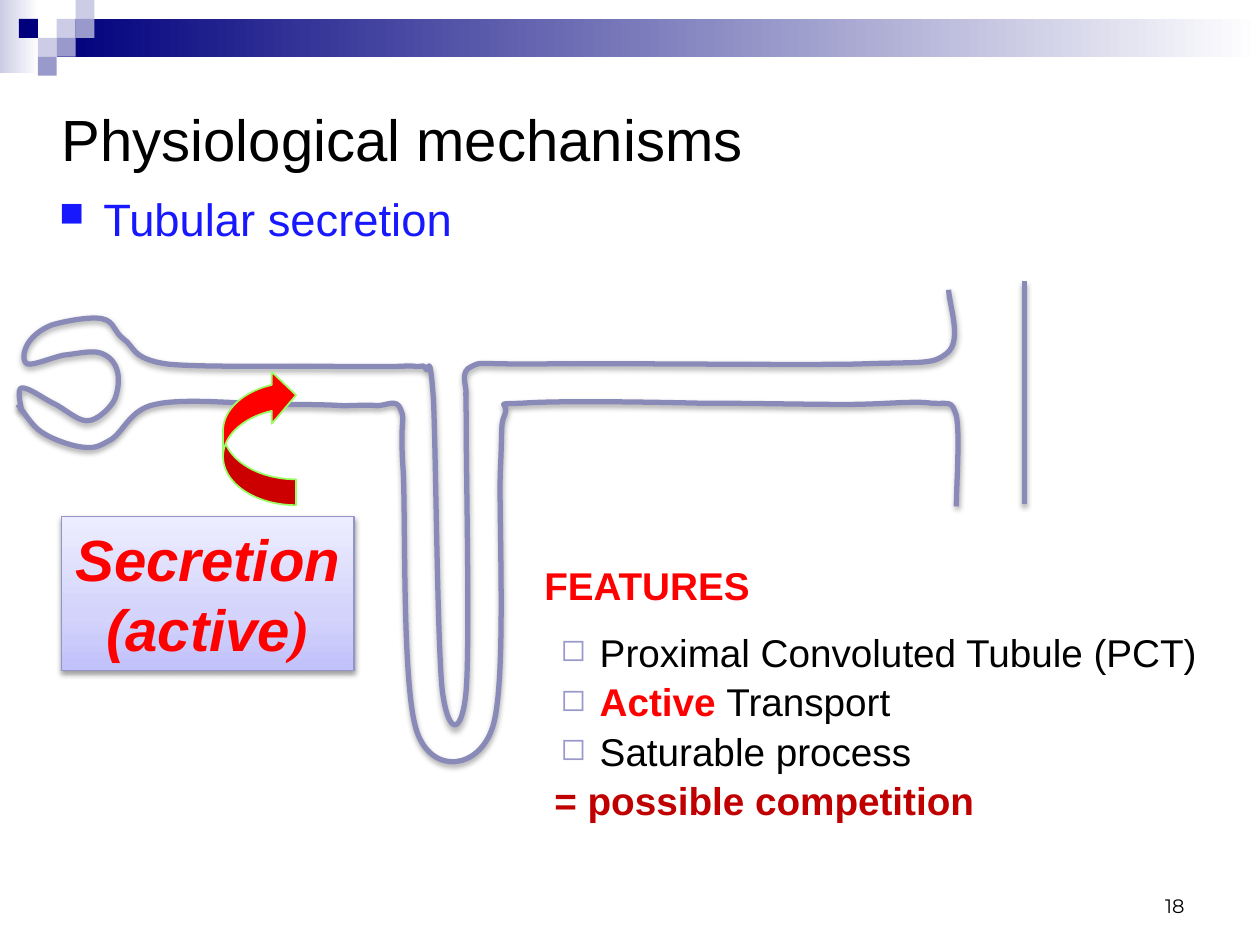
"""Build the tubular secretion slide."""
from copy import deepcopy

from lxml import etree
from pptx import Presentation
from pptx.dml.color import RGBColor
from pptx.enum.shapes import MSO_CONNECTOR, MSO_SHAPE
from pptx.enum.text import MSO_ANCHOR, MSO_AUTO_SIZE, PP_ALIGN
from pptx.oxml.ns import qn
from pptx.util import Inches, Pt

RECTANGLE = MSO_SHAPE.RECTANGLE
CURVED_ARROW = MSO_SHAPE.CURVED_RIGHT_ARROW
STRAIGHT = MSO_CONNECTOR.STRAIGHT
MIDDLE, BOTTOM = MSO_ANCHOR.MIDDLE, MSO_ANCHOR.BOTTOM
CENTER, RIGHT = PP_ALIGN.CENTER, PP_ALIGN.RIGHT
GROW = MSO_AUTO_SIZE.SHAPE_TO_FIT_TEXT

COLORS = {
    "black": "000000", "white": "FFFFFF", "navy": "00007D", "pale": "CCCCE6",
    "lavender": "9999CC", "blue": "1818FF", "red": "FF0000", "dark red": "C00000",
    "tubule": "8A8AB9", "box line": "9494C9", "box low": "C1C1FB",
    "box mid": "D3D3FB", "box high": "EDEDFF", "lime": "99FF66",
}
SQUARES = [(3, 1, "pale"), (4, 0, "pale"), (4, 1, "lavender"), (2, 2, "pale"),
           (1, 1, "navy"), (3, 2, "lavender"), (2, 3, "lavender")]
SQUARE_SIZE = 0.15
TUBULE_SHADOW = {"opacity": 35, "blur": 3.1, "distance": 1.8}
BOX_SHADOW = {"opacity": 38, "blur": 3.1, "distance": 1.6}
TIGHT = {"margin_left": Inches(0.09), "margin_right": Inches(0.09),
         "margin_top": Inches(0.04), "margin_bottom": Inches(0.04)}

UPPER_WALL = [
    (0.17, 3.26),
    (0.17, 3.23, 0.13, 3.09, 0.17, 3.08), (0.22, 3.07, 0.34, 3.16, 0.42, 3.2),
    (0.51, 3.24, 0.61, 3.34, 0.69, 3.34), (0.77, 3.34, 0.86, 3.25, 0.9, 3.19),
    (0.94, 3.12, 0.95, 3, 0.93, 2.94), (0.91, 2.87, 0.86, 2.82, 0.79, 2.8),
    (0.72, 2.78, 0.6, 2.81, 0.5, 2.82), (0.41, 2.84, 0.27, 2.9, 0.22, 2.89),
    (0.17, 2.87, 0.19, 2.78, 0.22, 2.73), (0.25, 2.68, 0.31, 2.62, 0.41, 2.58),
    (0.51, 2.55, 0.72, 2.51, 0.81, 2.53), (0.91, 2.55, 0.9, 2.63, 0.98, 2.69),
    (1.07, 2.75, 1.04, 2.85, 1.33, 2.89), (1.61, 2.92, 2.42, 2.9, 2.72, 2.91),
    (3.01, 2.91, 2.98, 2.91, 3.08, 2.91), (3.18, 2.91, 3.26, 2.9, 3.31, 2.91),
    (3.36, 2.91, 3.36, 2.89, 3.38, 2.93), (3.4, 2.97, 3.41, 2.74, 3.44, 3.17),
    (3.46, 3.59, 3.47, 5.09, 3.51, 5.48), (3.56, 5.86, 3.67, 5.83, 3.7, 5.48),
    (3.73, 5.12, 3.7, 3.74, 3.7, 3.35), (3.7, 2.96, 3.69, 3.2, 3.7, 3.12),
    (3.7, 3.05, 3.65, 2.95, 3.74, 2.91), (3.83, 2.87, 3.74, 2.89, 4.24, 2.89),
    (4.75, 2.88, 6.25, 2.9, 6.8, 2.89), (7.34, 2.87, 7.4, 2.9, 7.52, 2.8),
    (7.64, 2.7, 7.53, 2.41, 7.53, 2.3),
]
LOWER_WALL = [
    (0.14, 3.21),
    (0.17, 3.24, 0.25, 3.38, 0.33, 3.43), (0.42, 3.49, 0.57, 3.54, 0.66, 3.55),
    (0.76, 3.56, 0.79, 3.54, 0.88, 3.49), (0.98, 3.43, 1.03, 3.25, 1.23, 3.21),
    (1.44, 3.16, 1.88, 3.2, 2.12, 3.21), (2.37, 3.21, 2.57, 3.21, 2.72, 3.22),
    (2.86, 3.22, 2.91, 3.21, 2.99, 3.22), (3.07, 3.22, 3.15, 3.16, 3.18, 3.25),
    (3.22, 3.34, 3.17, 3.31, 3.2, 3.74), (3.22, 4.16, 3.19, 5.47, 3.31, 5.81),
    (3.43, 6.15, 3.8, 6.11, 3.91, 5.77), (4.02, 5.43, 3.96, 4.17, 3.97, 3.76),
    (3.99, 3.34, 3.97, 3.38, 4.01, 3.28), (4.04, 3.19, 3.9, 3.21, 4.15, 3.2),
    (4.41, 3.18, 5.12, 3.19, 5.54, 3.2), (5.97, 3.2, 6.4, 3.21, 6.71, 3.21),
    (7.02, 3.21, 7.25, 3.18, 7.39, 3.2), (7.54, 3.21, 7.55, 3.17, 7.59, 3.3),
    (7.62, 3.44, 7.59, 3.87, 7.59, 4.02),
]


def color(name):
    return RGBColor.from_string(COLORS[name])


def add_xml(parent, tag, **attributes):
    values = {key: str(value) for key, value in attributes.items()}
    return etree.SubElement(parent, qn(tag), values)


class SlideBuilder:
    """Hold the text style and the current slide."""

    def __init__(self, slide, font="Arial"):
        self.slide = slide
        self.font = font

    def outline(self, shape, name, width):
        shape.line.color.rgb = color(name)
        shape.line.width = Pt(width)

    def shadow(self, shape, opacity, blur, distance):
        properties = shape.element.spPr
        effects = properties.find(qn("a:effectLst"))
        if effects is None:
            effects = add_xml(properties, "a:effectLst")
        outer = add_xml(effects, "a:outerShdw", blurRad=Pt(blur), dist=Pt(distance),
                        dir=90 * 60000, rotWithShape=0)
        shade = add_xml(outer, "a:srgbClr", val=COLORS["black"])
        add_xml(shade, "a:alpha", val=opacity * 1000)

    def shape(self, box, fill, kind=RECTANGLE):
        shape = self.slide.shapes.add_shape(kind, *map(Inches, box))
        shape.shadow.inherit = False
        shape.line.fill.background()
        shape.fill.solid()
        shape.fill.fore_color.rgb = color(fill)
        return shape

    def gradient(self, box, stops, angle=0):
        shape = self.shape(box, stops[0][1])
        shape.fill.gradient()
        shape.fill.gradient_angle = angle
        stop_list = shape.element.spPr.find(".//" + qn("a:gsLst"))
        while len(stop_list) < len(stops):
            stop_list.append(deepcopy(stop_list[0]))
        for stop, (position, name) in zip(shape.fill.gradient_stops, stops):
            stop.position = position
            stop.color.rgb = color(name)
        return shape

    def curve(self, segments):
        values = [Inches(value) for segment in segments for value in segment]
        points = list(zip(values[::2], values[1::2]))
        builder = self.slide.shapes.build_freeform(*points[0])
        builder.add_line_segments(points[1:], close=False)
        shape = builder.convert_to_shape()
        lines = list(shape.element.iter(qn("a:lnTo")))
        for start in range(0, len(lines), 3):
            bezier = etree.Element(qn("a:cubicBezTo"))
            lines[start].addprevious(bezier)
            for line in lines[start:start + 3]:
                bezier.append(line[0])
                line.getparent().remove(line)
        shape.fill.background()
        shape.shadow.inherit = False
        self.outline(shape, "tubule", 3)
        self.shadow(shape, **TUBULE_SHADOW)

    def line(self, *ends):
        connector = self.slide.shapes.add_connector(STRAIGHT, *map(Inches, ends))
        self.outline(connector, "tubule", 3)
        self.shadow(connector, **TUBULE_SHADOW)

    def set_text(self, shape, paragraphs, size, align=None, bullet=None, **frame_format):
        frame = shape.text_frame
        for name, value in {"word_wrap": True, **frame_format}.items():
            setattr(frame, name, value)
        for index, runs in enumerate(paragraphs):
            paragraph = frame.add_paragraph() if index else frame.paragraphs[0]
            paragraph.alignment = align
            if bullet:
                self.bullet(paragraph, **bullet)
            for text, name, font_format in runs:
                run = paragraph.add_run()
                run.text = text
                run.font.color.rgb = color(name)
                style = {"name": self.font, "size": Pt(size), **font_format}
                for key, value in style.items():
                    setattr(run.font, key, value)

    def bullet(self, paragraph, symbol, name, scale, left, hanging, spacing=1.0, level=0):
        paragraph.level = level
        properties = paragraph._p.get_or_add_pPr()
        properties.set("marL", str(Inches(left)))
        properties.set("indent", str(-Inches(hanging)))
        before = add_xml(properties, "a:spcBef")
        add_xml(before, "a:spcPct", val=20000)
        add_xml(add_xml(properties, "a:buClr"), "a:srgbClr", val=COLORS[name])
        add_xml(properties, "a:buSzPct", val=scale * 1000)
        add_xml(properties, "a:buChar", char=symbol)
        paragraph.line_spacing = spacing

    def text(self, box, paragraphs, size, **options):
        shape = self.slide.shapes.add_textbox(*map(Inches, box))
        self.set_text(shape, paragraphs, size, **options)
        return shape


def main():
    presentation = Presentation()
    presentation.slide_width, presentation.slide_height = Inches(10), Inches(7.5)
    page = SlideBuilder(presentation.slides.add_slide(presentation.slide_layouts[6]))
    bold = {"bold": True}
    emphasis = {"bold": True, "italic": True}

    page.gradient((0, 0, 0.31, 0.58), [(0, "pale"), (1, "white")])
    page.gradient((0.45, 0.15, 9.55, 0.3), [(0, "navy"), (1, "white")])
    for column, row, name in SQUARES:
        page.shape((column * SQUARE_SIZE, row * SQUARE_SIZE, SQUARE_SIZE, SQUARE_SIZE), name)

    page.text((0.39, 0.72, 9.16, 0.75), [[("Physiological mechanisms", "black", {})]], 33.2,
              vertical_anchor=MIDDLE)
    page.text((0.38, 1.48, 5.04, 0.67), [[("Tubular secretion", "blue", {})]], 25.9,
              bullet={"symbol": "■", "name": "blue", "scale": 75, "left": 0.35,
                      "hanging": 0.35}, **TIGHT)
    page.text((4.23, 4.42, 1.83, 0.46), [[("FEATURES", "red", bold)]], 22.1,
              word_wrap=False, auto_size=GROW, **TIGHT)
    features = page.text(
        (3.77, 4.99, 6.24, 1.38),
        [[("Proximal Convoluted Tubule (PCT)", "black", {})],
         [("Active ", "red", bold), ("Transport", "black", {})],
         [("Saturable process", "black", {})],
         [("= possible competition", "dark red", bold)]], 22.1,
        bullet={"symbol": "◻", "name": "lavender", "scale": 80, "left": 0.9,
                "hanging": 0.31, "spacing": 0.9, "level": 1}, **TIGHT)
    conclusion = features.text_frame.paragraphs[-1]._p.pPr
    conclusion.set("marL", str(Inches(0.54)))
    conclusion.set("indent", "0")
    for tag in ("a:buClr", "a:buSzPct"):
        conclusion.remove(conclusion.find(qn(tag)))
    conclusion.replace(conclusion.find(qn("a:buChar")), etree.Element(qn("a:buNone")))

    page.curve(UPPER_WALL)
    page.curve(LOWER_WALL)
    page.line(8.13, 2.23, 8.13, 4)

    secretion = page.gradient((0.49, 4.1, 2.32, 1.22),
                              [(0, "box low"), (0.35, "box mid"), (1, "box high")], 90)
    page.outline(secretion, "box line", 0.75)
    page.shadow(secretion, **BOX_SHADOW)
    page.set_text(secretion,
                  [[("Secretion", "red", emphasis)],
                   [("(active", "red", emphasis),
                    (")", "red", {**emphasis, "name": "Times New Roman"})]],
                  33.2, align=CENTER, word_wrap=False, auto_size=GROW)
    arrow = page.shape((1.77, 2.93, 0.58, 1.08), "red", CURVED_ARROW)
    for index, value in enumerate((0.355, 0.71, 0.333)):
        arrow.adjustments[index] = value
    arrow.element.spPr.xfrm.set("flipV", "1")
    page.outline(arrow, "lime", 1)
    page.text((7.17, 6.83, 2.33, 0.5), [[("18", "black", {"name": "Montserrat"})]], 11.1,
              align=RIGHT, vertical_anchor=BOTTOM)
    presentation.save("out.pptx")


if __name__ == "__main__":
    main()
